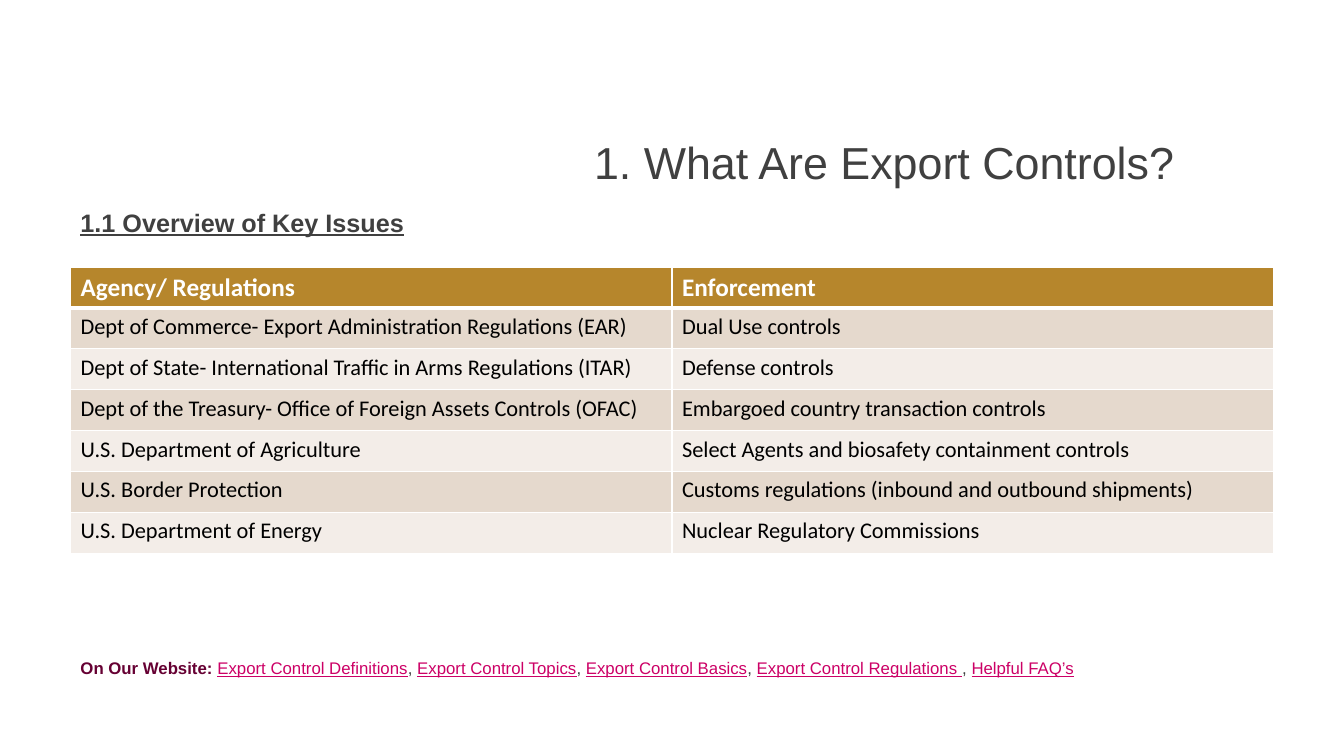
from lxml import etree
from pptx import Presentation
from pptx.dml.color import RGBColor
from pptx.enum import text
from pptx.oxml.ns import qn
from pptx.util import Pt

WHITE = RGBColor(0xFF, 0xFF, 0xFF)
BLACK = RGBColor(0, 0, 0)
GRAY = RGBColor(0x40, 0x40, 0x40)
GOLD = RGBColor(0xB6, 0x86, 0x2C)
SAND = RGBColor(0xE5, 0xD9, 0xCD)
CREAM = RGBColor(0xF3, 0xED, 0xE8)
MAROON = RGBColor(0x66, 0x00, 0x33)
PINK = RGBColor(0xCC, 0x00, 0x66)

LEFT, WIDTH = 50.4, 859.2
ROW_HEIGHT = 29.2

AGENCIES = [
    ("Agency/ Regulations", "Enforcement"),
    ("Dept of Commerce- Export Administration Regulations (EAR)", "Dual Use controls"),
    ("Dept of State- International Traffic in Arms Regulations (ITAR)", "Defense controls"),
    ("Dept of the Treasury- Office of Foreign Assets Controls (OFAC)",
     "Embargoed country transaction controls"),
    ("U.S. Department of Agriculture", "Select Agents and biosafety containment controls"),
    ("U.S. Border Protection", "Customs regulations (inbound and outbound shipments)"),
    ("U.S. Department of Energy", "Nuclear Regulatory Commissions"),
]
TOPICS = ["Export Control Definitions", "Export Control Topics", "Export Control Basics",
          "Export Control Regulations ", "Helpful FAQ’s"]

deck = Presentation()
deck.slide_width, deck.slide_height = Pt(960), Pt(540)
slide = deck.slides.add_slide(deck.slide_layouts[6])


def add_line(left, top, width, height, runs, size, **frame_format):
    """Add a one-paragraph text box; runs are (words, colour, bold, underline)."""
    frame = slide.shapes.add_textbox(Pt(left), Pt(top), Pt(width), Pt(height)).text_frame
    frame.word_wrap = True
    for key, value in frame_format.items():
        setattr(frame, key, value)
    line = frame.paragraphs[0]
    line.line_spacing = 0.9
    for words, colour, bold, underline in runs:
        run = line.add_run()
        run.text = words
        run.font.color.rgb = colour
        for key, value in {"name": "Arial", "size": Pt(size), "bold": bold,
                           "underline": underline}.items():
            setattr(run.font, key, value)
    return line


def set_borders(cell, widths):
    """Draw white cell borders; widths holds points for left, right, top, bottom."""
    properties = cell._tc.get_or_add_tcPr()
    for place, (side, width) in enumerate(zip("LRTB", widths)):
        border = etree.Element(qn(f"a:ln{side}"), w=str(Pt(width)))
        fill = etree.SubElement(border, qn("a:solidFill"))
        etree.SubElement(fill, qn("a:srgbClr"), val=str(WHITE))
        properties.insert(place, border)


title = add_line(311.8, 98.6, 640, 38.2, [("1. What Are Export Controls?", GRAY, False, False)],
                 32, vertical_anchor=text.MSO_ANCHOR.MIDDLE)
title.alignment = text.PP_ALIGN.CENTER

add_line(LEFT, 146.9, WIDTH, 28, [("1.1 Overview of Key Issues", GRAY, True, True)], 18)

table = slide.shapes.add_table(len(AGENCIES), 2, Pt(LEFT), Pt(190.8), Pt(WIDTH),
                               Pt(ROW_HEIGHT * len(AGENCIES))).table
for row, agency in enumerate(AGENCIES):
    table.rows[row].height = Pt(ROW_HEIGHT)
    header = row == 0
    for column, words in enumerate(agency):
        cell = table.cell(row, column)
        cell.text = words
        cell.fill.solid()
        cell.fill.fore_color.rgb = GOLD if header else SAND if row % 2 else CREAM
        set_borders(cell, (1, 1, 3 if row == 1 else 1, 3 if header else 1))
        font = cell.text_frame.paragraphs[0].runs[0].font
        font.color.rgb = WHITE if header else BLACK
        for key, value in {"name": "Calibri", "size": Pt(18 if header else 16),
                           "bold": header}.items():
            setattr(font, key, value)

website = [("On Our Website: ", MAROON, True, False)]
for number, topic in enumerate(TOPICS):
    if number:
        website.append((", ", GRAY, False, False))
    website.append((topic, PINK, False, True))
add_line(LEFT, 468, WIDTH, 22, website, 12)

deck.save("out.pptx")
